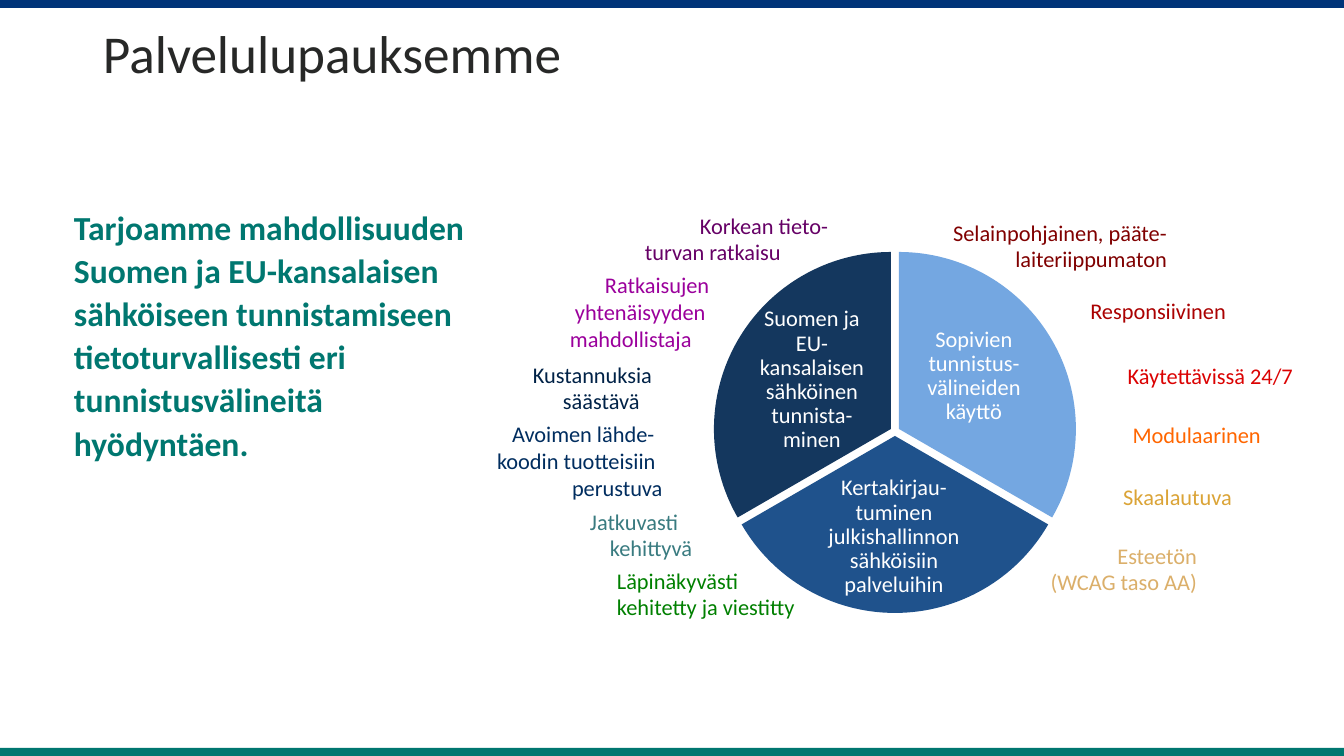
from dataclasses import dataclass

from pptx import Presentation
from pptx.dml.color import RGBColor
from pptx.enum.shapes import MSO_SHAPE as SHAPE
from pptx.enum.text import MSO_ANCHOR as ANCHOR, MSO_AUTO_SIZE as AUTO, PP_ALIGN as ALIGN
from pptx.util import Emu, Pt

EMU_PER_PX = 914400 / 100.8
W, H, BAR = 1344, 756, 8
PIE = 354
FONT = "Calibri"

COLORS = {
    "navy": "003479", "teal": "007770", "ink": "272827", "white": "FFFFFF",
    "sky": "74A7E1", "blue": "1F528C", "midnight": "14375E",
    "purple": "660066", "magenta": "9B009C", "deep": "002247", "marine": "002D5F",
    "sea": "397B80", "green": "008000", "maroon": "800000", "crimson": "AB0101",
    "red": "DB0202", "orange": "FF6600", "gold": "DBA437", "sand": "DBAF6A",
}


def px(n: float) -> Emu:
    return Emu(round(n * EMU_PER_PX))


def rgb(name: str) -> RGBColor:
    return RGBColor.from_string(COLORS[name])


@dataclass
class Slice:
    at: tuple[int, int]
    start: int  # degrees, clockwise from the right
    end: int
    color: str
    text: str
    box: tuple[int, int, int, int]


@dataclass
class Label:
    box: tuple[int, int, int, int]
    color: str
    lines: list[str]
    indents: tuple[int, ...] = ()  # px per line; right-aligned when empty


SLICES = [
    Slice((722, 252), 270, 30, "sky", "Sopivien tunnistus-välineiden käyttö",
          (914, 317, 120, 118)),
    Slice((718, 259), 30, 150, "blue",
          "Kertakirjau-tuminen julkishallinnon sähköisiin palveluihin",
          (814, 482, 160, 110)),
    Slice((714, 252), 150, 270, "midnight",
          "Suomen ja EU-kansalaisen sähköinen tunnista-minen",
          (752, 321, 120, 118)),
]

LABELS = [
    # Left of the pie
    Label((635, 208, 224, 61), "purple", ["Korkean tieto-", "turvan ratkaisu"], (55, 0)),
    Label((560, 281, 216, 61), "magenta",
          ["Ratkaisujen", "yhtenäisyyden", "mahdollistaja"], (35, 5, 0)),
    Label((523, 357, 167, 61), "deep", ["Kustannuksia", "säästävä"], (0, 30)),
    Label((487, 417, 243, 87), "marine",
          ["Avoimen lähde-", "koodin tuotteisiin", "perustuva"], (15, 0, 75)),
    Label((580, 504, 170, 61), "sea", ["Jatkuvasti", "kehittyvä"], (0, 20)),
    Label((607, 563, 239, 61), "green", ["Läpinäkyvästi", "kehitetty ja viestitty"], (0, 0)),
    # Right of the pie
    Label((894, 215, 283, 61), "maroon", ["Selainpohjainen, pääte-", "laiteriippumaton"]),
    Label((1039, 280, 197, 61), "crimson", ["Responsiivinen"]),
    Label((1079, 345, 224, 61), "red", ["Käytettävissä 24/7"]),
    Label((1086, 404, 185, 61), "orange", ["Modulaarinen"]),
    Label((1080, 466, 162, 61), "gold", ["Skaalautuva"]),
    Label((990, 538, 217, 61), "sand", ["Esteetön", "(WCAG taso AA)"]),
]


def apply(obj, values: dict) -> None:
    for name, value in values.items():
        setattr(obj, name, value)


def add_filled(shapes, kind: SHAPE, box: tuple[int, ...], color: str):
    sp = shapes.add_shape(kind, *map(px, box))
    sp.shadow.inherit = False
    sp.fill.solid()
    sp.fill.fore_color.rgb = rgb(color)
    sp.line.fill.background()
    return sp


def write(tf, lines: list[str], color: str, size: int, align: ALIGN = ALIGN.LEFT,
          anchor: ANCHOR = ANCHOR.MIDDLE, spacing: float = 1.0, bold: bool = False,
          indents: tuple[int, ...] = (), inset: tuple[int, int] = (10, 5)) -> None:
    x, y = map(px, inset)
    apply(tf, {"word_wrap": True, "auto_size": AUTO.NONE, "vertical_anchor": anchor,
               "margin_left": x, "margin_right": x, "margin_top": y, "margin_bottom": y})
    for i, line in enumerate(lines):
        p = tf.paragraphs[0] if i == 0 else tf.add_paragraph()
        apply(p, {"alignment": align, "line_spacing": spacing})
        if indents and indents[i]:
            p._p.get_or_add_pPr().set("marL", str(px(indents[i])))
        r = p.add_run()
        r.text = line
        apply(r.font, {"name": FONT, "size": Pt(size), "bold": bold})
        r.font.color.rgb = rgb(color)


def add_text(shapes, box: tuple[int, ...], *args, **fmt) -> None:
    write(shapes.add_textbox(*map(px, box)).text_frame, *args, **fmt)


def add_slice(shapes, item: Slice) -> None:
    sp = add_filled(shapes, SHAPE.PIE, (*item.at, PIE, PIE), item.color)
    for i, degrees in enumerate((item.start, item.end)):
        sp.adjustments[i] = degrees * 0.6  # 60000 units a degree, scaled by 100000
    add_text(shapes, item.box, [item.text], "white", 16, align=ALIGN.CENTER,
             spacing=0.9, inset=(2, 2))


def add_label(shapes, item: Label) -> None:
    align = ALIGN.LEFT if item.indents else ALIGN.RIGHT
    add_text(shapes, item.box, item.lines, item.color, 16, align=align, indents=item.indents)


def main() -> None:
    prs = Presentation()
    apply(prs, {"slide_width": px(W), "slide_height": px(H)})
    s = prs.slides.add_slide(prs.slide_layouts[5])

    # Edge bars
    for top, color in ((0, "navy"), (H - BAR, "teal")):
        add_filled(s.shapes, SHAPE.RECTANGLE, (0, top, W, BAR), color)

    # Title
    title = s.shapes.title
    apply(title, {"left": px(93), "top": px(23), "width": px(1159), "height": px(130)})
    write(title.text_frame, ["Palvelulupauksemme"], "ink", 38, anchor=ANCHOR.TOP, spacing=0.9)

    # Pie with its slice texts
    pie = s.shapes.add_group_shape()
    for item in SLICES:
        add_slice(pie.shapes, item)

    # Labels around the pie
    for label in LABELS:
        add_label(s.shapes, label)

    # Promise
    add_text(s.shapes, (64, 199, 414, 314),
             ["Tarjoamme mahdollisuuden Suomen ja EU-kansalaisen sähköiseen tunnistamiseen "
              "tietoturvallisesti eri tunnistusvälineitä hyödyntäen."],
             "teal", 24, anchor=ANCHOR.TOP, spacing=1.07, bold=True)

    prs.save("out.pptx")


if __name__ == "__main__":
    main()
